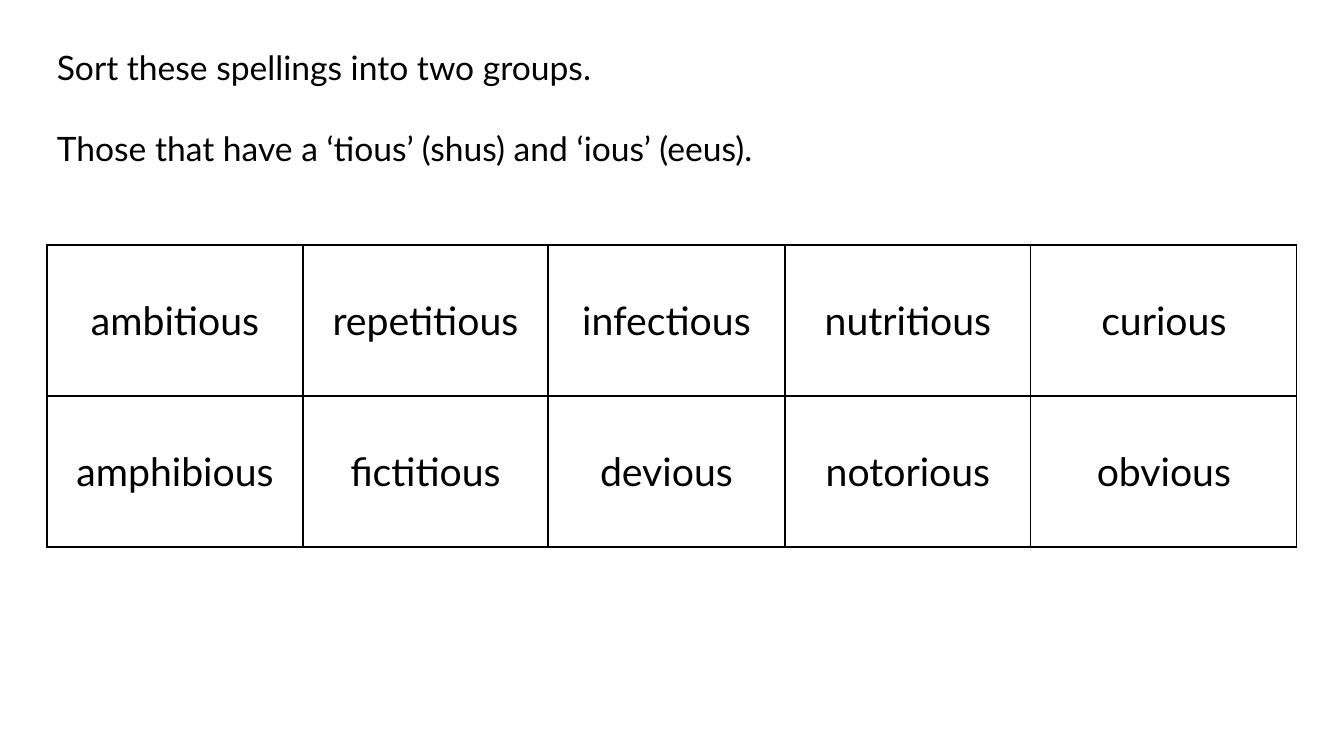
from lxml.etree import SubElement
from pptx import Presentation
from pptx.dml.color import RGBColor
from pptx.enum.text import MSO_ANCHOR, PP_ALIGN
from pptx.oxml.ns import qn
from pptx.util import Pt

INSTRUCTIONS = [
    "Sort these spellings into two groups.",
    "Those that have a ‘tious’ (shus) and ‘ious’ (eeus).",
]
SPELLINGS = [
    ["ambitious", "repetitious", "infectious", "nutritious", "curious"],
    ["amphibious", "fictitious", "devious", "notorious", "obvious"],
]
COLUMN_WIDTHS = [256, 245, 237, 246, 266]
ROW_HEIGHT = 151
LEFT = 47
BLACK = RGBColor(0, 0, 0)
WHITE = RGBColor(255, 255, 255)


def px(length):
    return round(length * 914400 / 100.8)


def style(para, size):
    for span in para.runs:
        span.font.name = "Lato"
        span.font.size = Pt(size)
        span.font.color.rgb = BLACK


def add_borders(cell):
    properties = cell._tc.get_or_add_tcPr()
    for side in ("lnL", "lnR", "lnT", "lnB"):
        line = SubElement(properties, qn(f"a:{side}"), w=str(Pt(1)))
        fill = SubElement(line, qn("a:solidFill"))
        SubElement(fill, qn("a:srgbClr"), val=str(BLACK))


deck = Presentation()
deck.slide_width, deck.slide_height = px(1344), px(756)
page = deck.slides.add_slide(deck.slide_layouts[6])

# Instructions
box = page.shapes.add_textbox(px(LEFT), px(42), px(946), px(173))
frame = box.text_frame
frame.word_wrap = True
frame.text = "\n".join(INSTRUCTIONS)
for index, para in enumerate(frame.paragraphs):
    if index:
        para.space_before = Pt(29)
    style(para, 24)

# Table of spellings
table = page.shapes.add_table(
    len(SPELLINGS), len(COLUMN_WIDTHS), px(LEFT), px(245),
    px(sum(COLUMN_WIDTHS)), px(ROW_HEIGHT * len(SPELLINGS))).table
table.first_row = table.horz_banding = False
for column, width in zip(table.columns, COLUMN_WIDTHS):
    column.width = px(width)
for row, words in zip(table.rows, SPELLINGS):
    row.height = px(ROW_HEIGHT)
    for cell, word in zip(row.cells, words):
        cell.text = word
        cell.vertical_anchor = MSO_ANCHOR.MIDDLE
        add_borders(cell)
        cell.fill.solid()
        cell.fill.fore_color.rgb = WHITE
        para = cell.text_frame.paragraphs[0]
        para.alignment = PP_ALIGN.CENTER
        style(para, 28)

deck.save("out.pptx")
